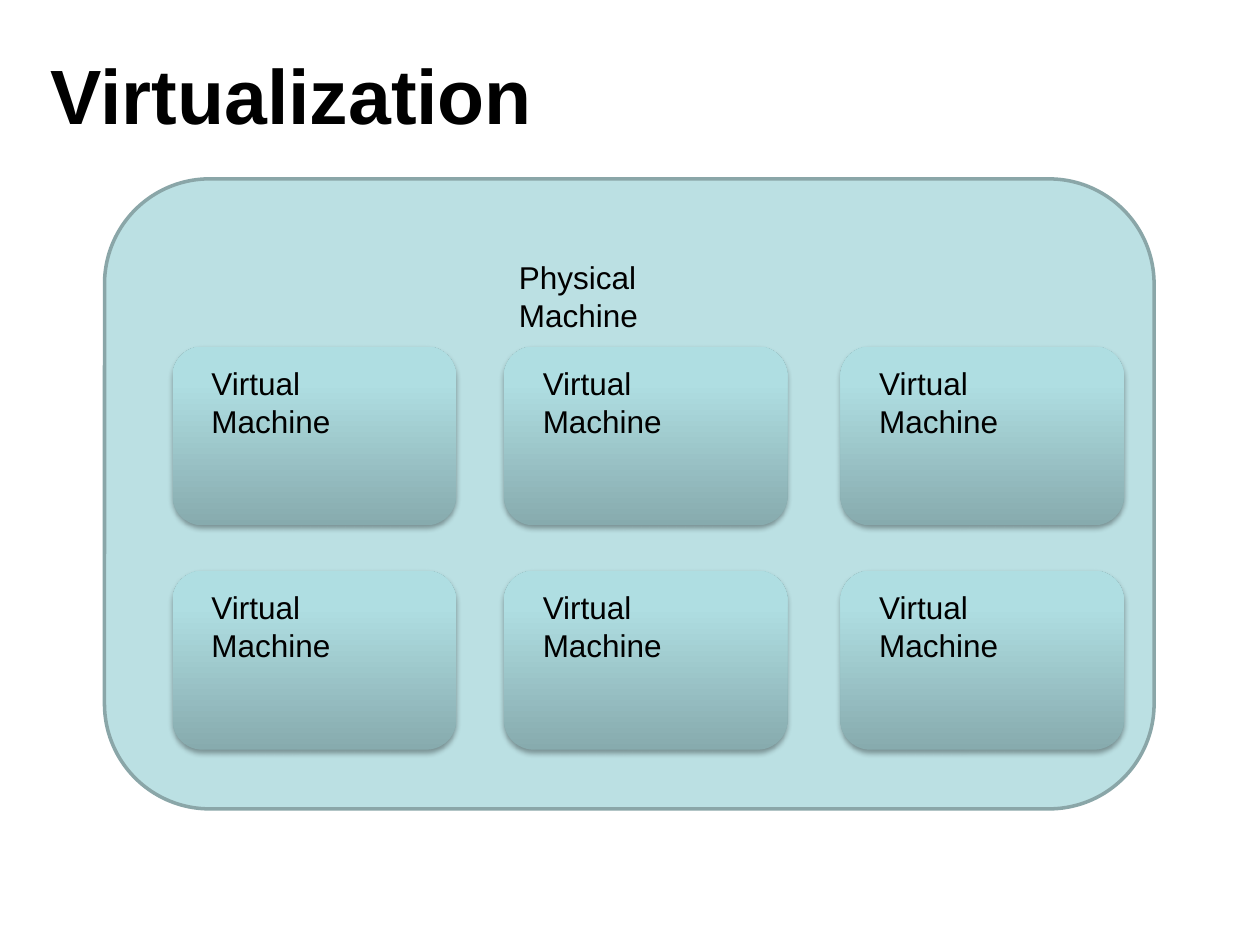
from copy import deepcopy

from lxml import etree
from pptx import Presentation
from pptx.dml.color import RGBColor
from pptx.enum import shapes, text
from pptx.oxml import ns
from pptx.util import Inches, Pt

TITLE = "Virtualization"
HOST_LABEL = "Physical Machine"
GUEST_LABEL = "Virtual Machine"
GUEST_COLUMNS = (1.37, 4, 6.67)
GUEST_ROWS = (2.75, 4.53)
GUEST_SIZE = (2.25, 1.42)
GUEST_GRADIENT = ((0, "87ABAE"), (0.8, "AFDEE2"), (1, "AFE0E4"))


def color(hex_value):
    return RGBColor.from_string(hex_value)


def format_text(frame, size, bold=False):
    font = frame.paragraphs[0].runs[0].font
    font.name, font.size, font.bold = "Arial", Pt(size), bold
    font.color.rgb = color("000000")


def add_label(container, wording, left, top, width):
    box = container.add_textbox(Inches(left), Inches(top), Inches(width), Inches(0.4))
    frame = box.text_frame
    frame.text = wording
    frame.word_wrap = True
    frame.auto_size = text.MSO_AUTO_SIZE.SHAPE_TO_FIT_TEXT
    format_text(frame, 18)


def add_rounded(container, left, top, width, height):
    shape = container.add_shape(
        shapes.MSO_SHAPE.ROUNDED_RECTANGLE,
        Inches(left), Inches(top), Inches(width), Inches(height))
    shape.shadow.inherit = False
    return shape


def fill_gradient(shape, stops):
    """Fill from bottom to top with three or more stops."""
    fill = shape.fill
    fill.gradient()
    fill.gradient_angle = 90
    stop_list = shape._element.spPr.find(".//" + ns.qn("a:gsLst"))
    while len(stop_list) < len(stops):
        stop_list.append(deepcopy(stop_list[-1]))
    for stop, (position, hex_value) in zip(fill.gradient_stops, stops):
        stop.position = position
        stop.color.rgb = color(hex_value)


def add_soft_shadow(shape):
    effects = shape._element.spPr.find(ns.qn("a:effectLst"))
    shadow = etree.SubElement(
        effects, ns.qn("a:outerShdw"), blurRad=str(Pt(3.1)), dist=str(Pt(1.8)),
        dir="5400000", rotWithShape="0")
    shade = etree.SubElement(shadow, ns.qn("a:srgbClr"), val="000000")
    etree.SubElement(shade, ns.qn("a:alpha"), val="35000")


def add_guest(slide, left, top):
    group = slide.shapes.add_group_shape()
    machine = add_rounded(group.shapes, left, top, *GUEST_SIZE)
    fill_gradient(machine, GUEST_GRADIENT)
    machine.line.fill.background()
    add_soft_shadow(machine)
    add_label(group.shapes, GUEST_LABEL, left + 0.21, top + 0.09, 1.84)


def add_title(slide):
    title = slide.shapes.title
    title.left, title.top = Inches(0.38), Inches(0.23)
    title.width, title.height = Inches(9.19), Inches(1.02)
    frame = title.text_frame
    frame.text = TITLE
    frame.vertical_anchor = text.MSO_ANCHOR.MIDDLE
    frame.margin_left = frame.margin_right = Inches(0.02)
    frame.margin_top = frame.margin_bottom = Inches(0.02)
    frame.paragraphs[0].alignment = text.PP_ALIGN.LEFT
    format_text(frame, 44, bold=True)


def main():
    presentation = Presentation()
    presentation.slide_width, presentation.slide_height = Inches(10), Inches(7.5)
    slide = presentation.slides.add_slide(presentation.slide_layouts[5])
    add_title(slide)

    host = add_rounded(slide.shapes, 0.83, 1.42, 8.33, 5)
    host.fill.solid()
    host.fill.fore_color.rgb = color("BBE0E3")
    host.line.color.rgb = color("8AA6A8")
    host.line.width = Pt(2)
    add_label(slide.shapes, HOST_LABEL, 4.02, 2, 1.96)

    for top in GUEST_ROWS:
        for left in GUEST_COLUMNS:
            add_guest(slide, left, top)
    presentation.save("out.pptx")


if __name__ == "__main__":
    main()
